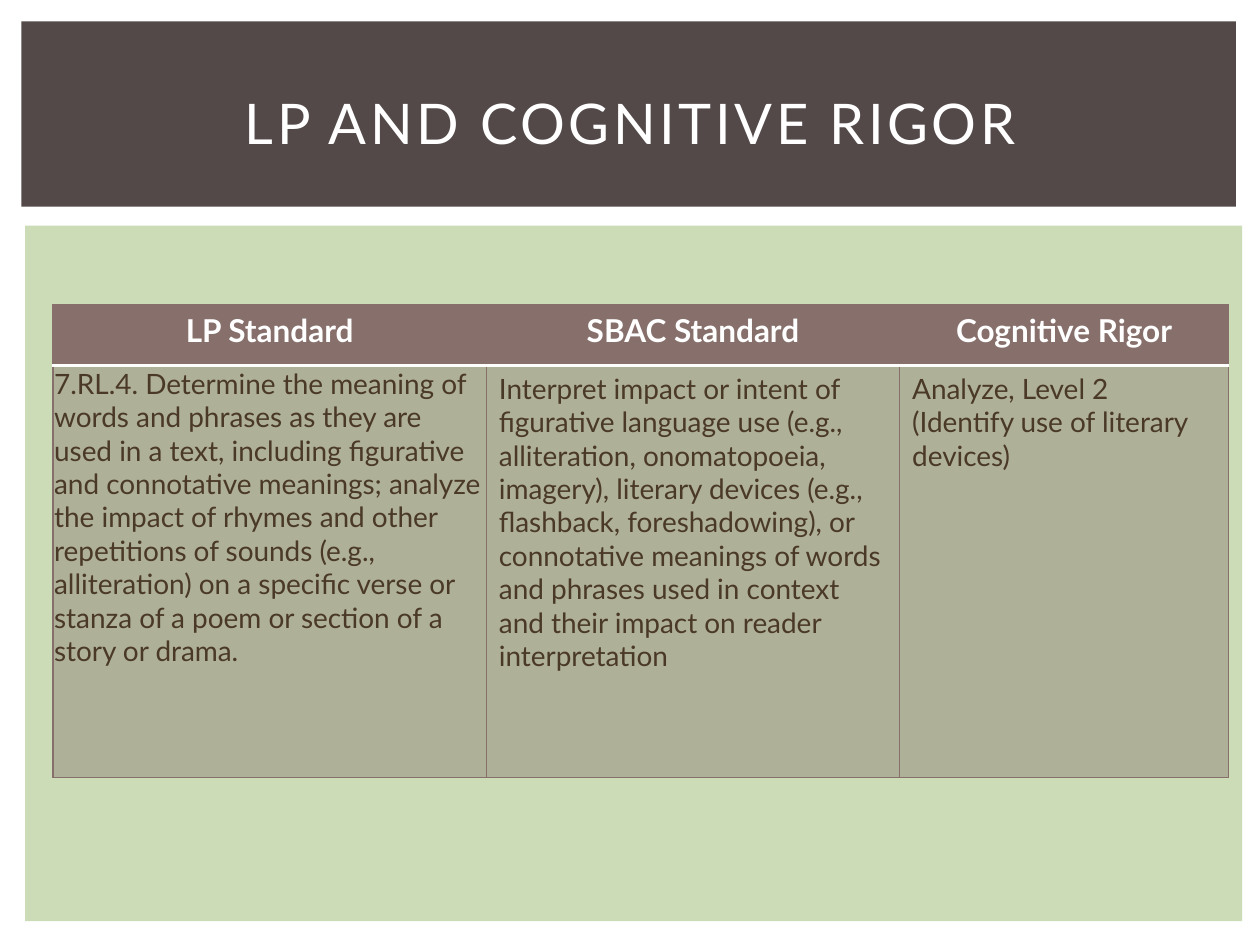
from lxml.etree import SubElement
from pptx import Presentation
from pptx.dml.color import RGBColor
from pptx.enum.shapes import MSO_SHAPE
from pptx.enum.text import MSO_ANCHOR, PP_ALIGN
from pptx.oxml.ns import qn
from pptx.util import Inches, Pt

FONT = "Lato"
WHITE = RGBColor(0xFF, 0xFF, 0xFF)
GREEN = RGBColor(0xCB, 0xDC, 0xB6)
DARK = RGBColor(0x53, 0x49, 0x49)
MAUVE = RGBColor(0x87, 0x70, 0x6B)
BROWN = RGBColor(0x4A, 0x39, 0x27)

COLUMN_WIDTHS = (3.44, 3.28, 2.61)
ROW_HEIGHTS = (0.48, 3.27)
HEADERS = ("LP Standard", "SBAC Standard", "Cognitive Rigor")
STANDARDS = (
    "7.RL.4. Determine the meaning of words and phrases as they are used in a text, "
    "including figurative and connotative meanings; analyze the impact of rhymes and "
    "other repetitions of sounds (e.g., alliteration) on a specific verse or stanza of "
    "a poem or section of a story or drama.",
    "Interpret impact or intent of figurative language use (e.g., alliteration, "
    "onomatopoeia, imagery), literary devices (e.g., flashback, foreshadowing), or "
    "connotative meanings of words and phrases used in context and their impact on "
    "reader interpretation",
    "Analyze, Level 2 (Identify use of literary devices)",
)


def add_panel(slide, position, left, top, width, height, color):
    """Add a plain rectangle at the given depth, behind the title."""
    panel = slide.shapes.add_shape(MSO_SHAPE.RECTANGLE, Inches(left), Inches(top),
                                   Inches(width), Inches(height))
    panel.shadow.inherit = False
    panel.fill.solid()
    panel.fill.fore_color.rgb = color
    panel.line.fill.background()
    slide.shapes.element.insert(2 + position, panel.element)


def format_text(paragraph, size, color, bold=False, alignment=PP_ALIGN.LEFT):
    paragraph.alignment = alignment
    for run in paragraph.runs:
        run.font.name = FONT
        run.font.size = Pt(size)
        run.font.bold = bold
        run.font.color.rgb = color


def set_title(slide, text):
    title = slide.shapes.title
    title.left, title.top = Inches(0.42), Inches(0.39)
    title.width, title.height = Inches(9.17), Inches(1.15)
    text_frame = title.text_frame
    text_frame.text = text
    text_frame.vertical_anchor = MSO_ANCHOR.MIDDLE
    paragraph = text_frame.paragraphs[0]
    format_text(paragraph, 32, WHITE, alignment=PP_ALIGN.CENTER)
    paragraph.runs[0].font._element.set("spc", "200")


def set_border(cell, side, color, width):
    line = SubElement(cell._tc.get_or_add_tcPr(), qn(f"a:ln{side}"), w=str(Pt(width)))
    fill = SubElement(line, qn("a:solidFill"))
    SubElement(fill, qn("a:srgbClr"), val=str(color))


def format_cell(cell, is_header):
    # Borders come before the fill; a white rule divides header and body
    divider = "B" if is_header else "T"
    for side in "LRTB":
        color, width = (WHITE, 1.5) if side == divider else (MAUVE, 0.79)
        set_border(cell, side, color, width)
    cell.fill.solid()
    cell.fill.fore_color.rgb = MAUVE
    paragraph = cell.text_frame.paragraphs[0]
    if is_header:
        format_text(paragraph, 18, WHITE, bold=True, alignment=PP_ALIGN.CENTER)
    else:
        color = cell._tc.tcPr.find(f"{qn('a:solidFill')}/{qn('a:srgbClr')}")
        SubElement(color, qn("a:alpha"), val="40000")
        format_text(paragraph, 16, BROWN)


def add_standards_table(slide):
    rows = (HEADERS, STANDARDS)
    frame = slide.shapes.add_table(len(rows), len(HEADERS), Inches(0.42), Inches(2.42),
                                   Inches(sum(COLUMN_WIDTHS)), Inches(sum(ROW_HEIGHTS)))
    table = frame.table
    table.first_row = table.horz_banding = False
    for column, width in zip(table.columns, COLUMN_WIDTHS):
        column.width = Inches(width)
    for row, height in zip(table.rows, ROW_HEIGHTS):
        row.height = Inches(height)
    for row_index, texts in enumerate(rows):
        for column_index, text in enumerate(texts):
            cell = table.cell(row_index, column_index)
            cell.text_frame.text = text
            format_cell(cell, is_header=row_index == 0)
    # The first standard sits tight against its cell edges
    cell = table.cell(1, 0)
    cell.margin_left = cell.margin_top = cell.margin_right = Inches(0.01)
    cell.margin_bottom = 0


def main():
    presentation = Presentation()
    presentation.slide_width, presentation.slide_height = Inches(10), Inches(7.5)
    slide = presentation.slides.add_slide(presentation.slide_layouts[5])

    # Background panels
    add_panel(slide, 0, 0.2, 1.79, 9.66, 5.52, GREEN)
    add_panel(slide, 1, 0.17, 0.17, 9.64, 1.47, DARK)

    # Title and table
    set_title(slide, "LP AND COGNITIVE RIGOR")
    add_standards_table(slide)

    presentation.save("out.pptx")


if __name__ == "__main__":
    main()
